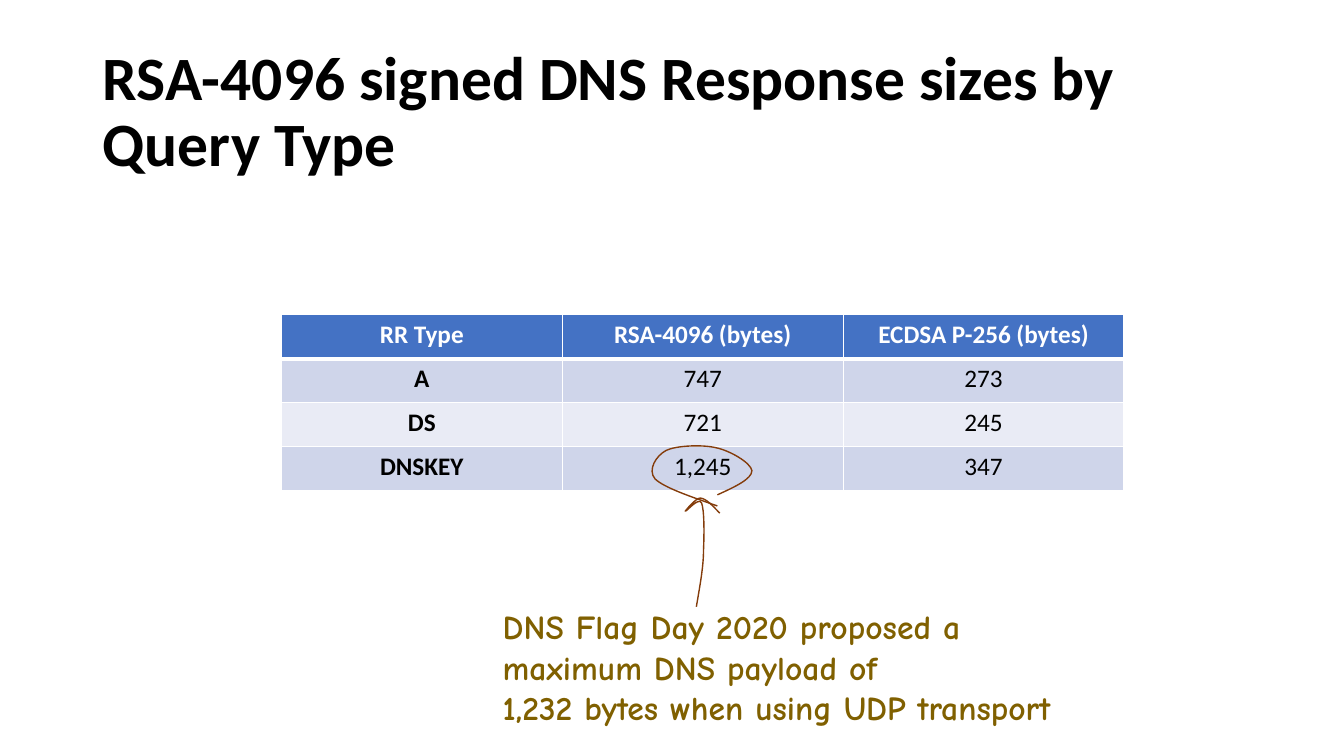
from lxml import etree
from pptx import Presentation
from pptx.dml.color import RGBColor
from pptx.enum.text import MSO_ANCHOR, PP_ALIGN
from pptx.oxml.ns import qn
from pptx.util import Cm, Pt

MIDDLE = MSO_ANCHOR.MIDDLE
CENTER = PP_ALIGN.CENTER
BLACK = RGBColor(0x00, 0x00, 0x00)
WHITE = RGBColor(0xFF, 0xFF, 0xFF)
HEADER_BLUE = RGBColor(0x44, 0x72, 0xC4)
BANDS = [RGBColor(0xE9, 0xEB, 0xF5), RGBColor(0xCF, 0xD5, 0xEA)]
PEN_BROWN = RGBColor(0x84, 0x3C, 0x0B)
NOTE_GOLD = RGBColor(0x80, 0x60, 0x00)


def add_run(paragraph, text, font, size, color, bold=True):
    run = paragraph.add_run()
    run.text = text
    run.font.name = font
    run.font.size = Pt(size)
    run.font.color.rgb = color
    run.font.bold = bold


def add_border(cell, side, width):
    border = etree.SubElement(cell._tc.get_or_add_tcPr(), qn(f"a:ln{side}"), w=str(Pt(width)))
    fill = etree.SubElement(border, qn("a:solidFill"))
    etree.SubElement(fill, qn("a:srgbClr"), val=str(WHITE))


prs = Presentation()
prs.slide_width = Cm(33.87)
prs.slide_height = Cm(19.05)
slide = prs.slides.add_slide(prs.slide_layouts[6])

title = slide.shapes.add_textbox(Cm(2.34), Cm(1.02), Cm(29.21), Cm(3.68)).text_frame
title.word_wrap = True
title.vertical_anchor = MIDDLE
title.paragraphs[0].line_spacing = 0.9
add_run(title.paragraphs[0], "RSA-4096 signed DNS Response sizes by Query Type", "Calibri", 44, BLACK)

response_sizes = [
    ["RR Type", "RSA-4096 (bytes)", "ECDSA P-256 (bytes)"],
    ["A", "747", "273"],
    ["DS", "721", "245"],
    ["DNSKEY", "1,245", "347"],
]
size_table = slide.shapes.add_table(4, 3, Cm(7.09), Cm(7.93), Cm(21.24), Cm(4.44)).table
for row in size_table.rows:
    row.height = Cm(1.11)
for r, values in enumerate(response_sizes):
    header = r == 0
    for c, value in enumerate(values):
        cell = size_table.cell(r, c)
        for side in "LRT":
            add_border(cell, side, 1)
        add_border(cell, "B", 3 if header else 1)
        cell.fill.solid()
        cell.fill.fore_color.rgb = HEADER_BLUE if header else BANDS[r % 2]
        paragraph = cell.text_frame.paragraphs[0]
        paragraph.alignment = CENTER
        add_run(paragraph, value, "Calibri", 18, WHITE if header else BLACK, header or c == 0)

arrow = [
    (17.55, 15.29),
    (17.63, 14.81), (17.73, 14.3), (17.73, 13.87),
    (17.75, 13.41), (17.75, 12.85), (17.68, 12.67),
    (17.6, 12.52), (17.3, 12.9), (17.27, 12.88),
    (17.27, 12.88), (17.53, 12.55), (17.65, 12.55),
    (17.81, 12.57), (17.96, 12.75), (18.14, 12.93),
]
circle = [
    (18.08, 12.47),
    (18.52, 12.27), (18.95, 12.07), (18.95, 11.86),
    (18.92, 11.66), (18.39, 11.35), (18.03, 11.28),
    (17.68, 11.2), (17.04, 11.23), (16.79, 11.35),
    (16.54, 11.48), (16.31, 11.84), (16.51, 12.07),
    (16.74, 12.29), (17.42, 12.52), (18.08, 12.75),
]
for controls in (arrow, circle):
    start, *rest = [(Cm(x), Cm(y)) for x, y in controls]
    builder = slide.shapes.build_freeform(*start)
    builder.add_line_segments(rest, close=False)
    stroke = builder.convert_to_shape()
    outline = next(stroke._element.iter(qn("a:path")))
    segments = outline.findall(qn("a:lnTo"))
    for first in range(0, len(segments), 3):
        curve = etree.SubElement(outline, qn("a:cubicBezTo"))
        for segment in segments[first:first + 3]:
            curve.append(segment[0])
            outline.remove(segment)
    stroke.shadow.inherit = False
    stroke.fill.background()
    stroke.line.color.rgb = PEN_BROWN
    stroke.line.width = Pt(1)

flag_day = slide.shapes.add_textbox(Cm(12.42), Cm(15.15), Cm(15.7), Cm(2.31)).text_frame
flag_day.word_wrap = True
add_run(flag_day.paragraphs[0], "DNS Flag Day 2020 proposed a maximum DNS payload of", "Comic Neue", 24, NOTE_GOLD)
add_run(flag_day.add_paragraph(), "1,232 bytes when using UDP transport", "Comic Neue", 24, NOTE_GOLD)

prs.save("out.pptx")
